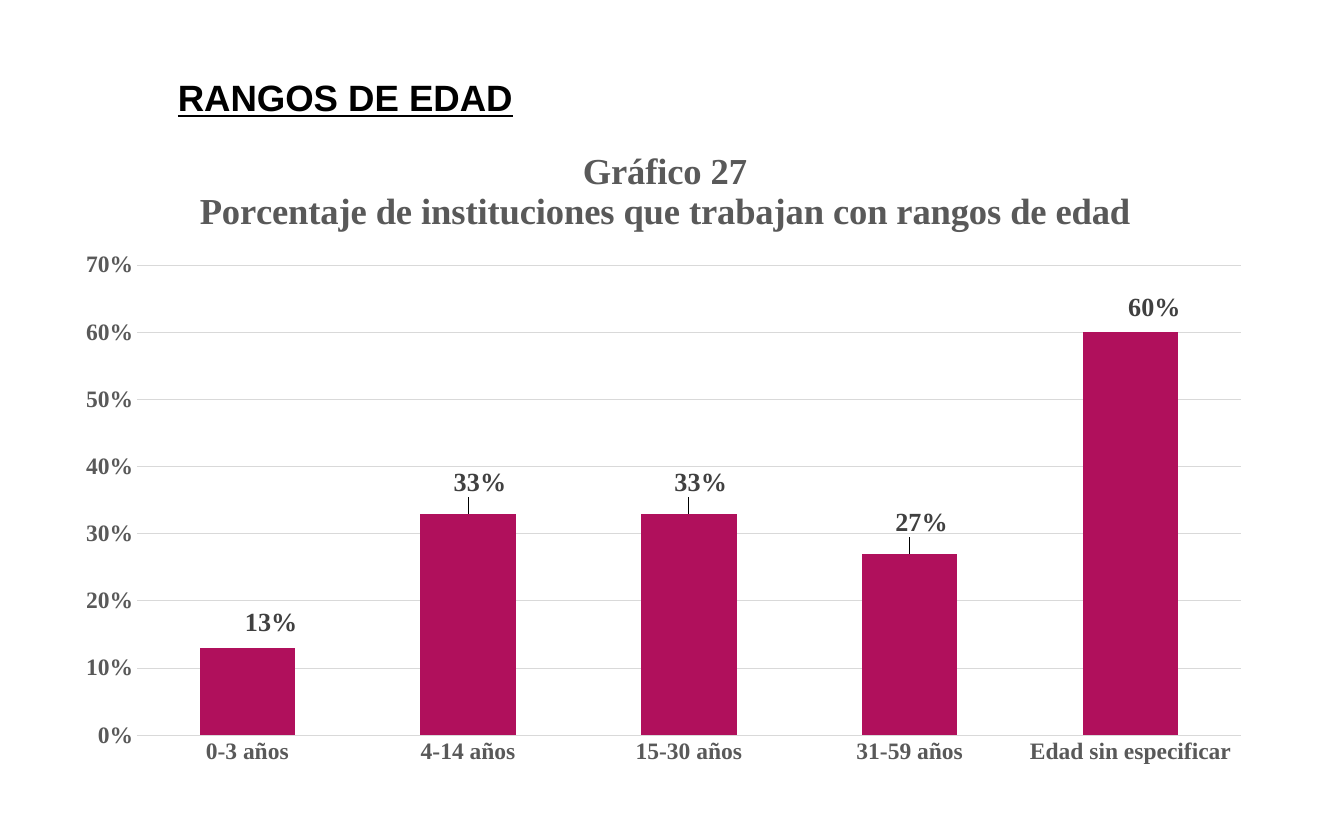
from lxml import etree
from pptx import Presentation
from pptx.chart import data as cd
from pptx.dml.color import RGBColor
from pptx.enum import chart as ce, text as te
from pptx.oxml.ns import qn
from pptx.util import Inches, Pt

BLACK = RGBColor(0x00, 0x00, 0x00)
DARK = RGBColor(0x40, 0x40, 0x40)
GREY = RGBColor(0x59, 0x59, 0x59)
PALE = RGBColor(0xD9, 0xD9, 0xD9)
PLUM = RGBColor(0xB0, 0x10, 0x5C)
SERIF = "Times New Roman"

HEAD = "RANGOS DE EDAD"
TITLE = ["Gráfico 27", "Porcentaje de instituciones que trabajan con rangos de edad"]
AGES = [
    ("0-3 años", 0.13, (0.02, -0.01)),
    ("4-14 años", 0.33, (0.01, -0.02)),
    ("15-30 años", 0.33, (0.01, -0.02)),
    ("31-59 años", 0.27, (0.01, -0.02)),
    ("Edad sin especificar", 0.6, (0.02, -0.01)),
]
PLOT = {"layoutTarget": "inner", "xMode": "edge", "yMode": "edge",
        "x": 0.06, "y": 0.21, "w": 0.92, "h": 0.73}


def style(font, size, color, name=SERIF):
    font.name, font.size, font.bold = name, Pt(size), True
    font.color.rgb = color


def layout(parts):
    node = etree.Element(qn("c:layout"))
    inner = etree.SubElement(node, qn("c:manualLayout"))
    for key, val in parts.items():
        etree.SubElement(inner, qn("c:" + key)).set("val", str(val))
    return node


def add_head(slide):
    head = slide.shapes.title
    head.left, head.top = Inches(1.79), Inches(0.75)
    head.width, head.height = Inches(6.77), Inches(0.57)
    frame = head.text_frame
    frame.word_wrap = True
    frame.vertical_anchor = te.MSO_ANCHOR.TOP
    frame.auto_size = te.MSO_AUTO_SIZE.SHAPE_TO_FIT_TEXT
    para = frame.paragraphs[0]
    para.alignment = te.PP_ALIGN.LEFT
    run = para.add_run()
    run.text = HEAD
    style(run.font, 28, BLACK, "Arial")
    run.font.underline = True


def add_title(chart):
    chart.has_title = True
    frame = chart.chart_title.text_frame
    for i, line in enumerate(TITLE):
        para = frame.add_paragraph() if i else frame.paragraphs[0]
        run = para.add_run()
        run.text = line
        style(run.font, 28, GREY)
    chart.chart_title.include_in_layout = False


def add_axes(chart):
    cat, val = chart.category_axis, chart.value_axis
    for axis in (cat, val):
        axis.major_tick_mark = axis.minor_tick_mark = ce.XL_TICK_MARK.NONE
        style(axis.tick_labels.font, 18, GREY)
    cat.has_major_gridlines = False
    val.minimum_scale, val.maximum_scale, val.major_unit = 0, 0.7, 0.1
    val.tick_labels.number_format = "0%"
    val.tick_labels.number_format_is_linked = False
    val.format.line.fill.background()
    for line in (cat.format.line, val.major_gridlines.format.line):
        line.color.rgb, line.width = PALE, Pt(0.75)


def add_labels(bars):
    tags = bars.data_labels
    tags.show_value = True
    tags.number_format, tags.number_format_is_linked = "0%", False
    tags.position = ce.XL_LABEL_POSITION.OUTSIDE_END
    style(tags.font, 20, DARK)
    for i, (_, _, (dx, dy)) in enumerate(AGES):
        tag = bars.points[i].data_label
        style(tag.font, 20, DARK)
        tag.position = ce.XL_LABEL_POSITION.OUTSIDE_END
    nodes = bars.data_labels._element.findall(qn("c:dLbl"))
    for node, (_, _, (dx, dy)) in zip(nodes, AGES):
        node.find(qn("c:idx")).addnext(layout({"x": dx, "y": dy}))


def add_chart(slide):
    data = cd.CategoryChartData(number_format="0%")
    data.categories = [age for age, _, _ in AGES]
    data.add_series("Series 1", [share for _, share, _ in AGES])
    chart = slide.shapes.add_chart(
        ce.XL_CHART_TYPE.COLUMN_CLUSTERED, Inches(0.69), Inches(1.38),
        Inches(12.76), Inches(6.85), data).chart
    chart.has_legend = False
    chart.font.name, chart.font.size = SERIF, Pt(10)
    chart.font.color.rgb = BLACK
    add_title(chart)
    add_axes(chart)
    plot = chart.plots[0]
    plot.gap_width, plot.vary_by_categories = 131, False
    bars = plot.series[0]
    bars.format.fill.solid()
    bars.format.fill.fore_color.rgb = PLUM
    add_labels(bars)
    area = chart._chartSpace.find(".//" + qn("c:plotArea"))
    for old in area.findall(qn("c:layout")):
        area.remove(old)
    area.insert(0, layout(PLOT))


def main():
    deck = Presentation()
    deck.slide_width, deck.slide_height = Inches(14.29), Inches(8.9)
    slide = deck.slides.add_slide(deck.slide_layouts[5])
    add_chart(slide)
    add_head(slide)
    deck.save("out.pptx")


if __name__ == "__main__":
    main()
